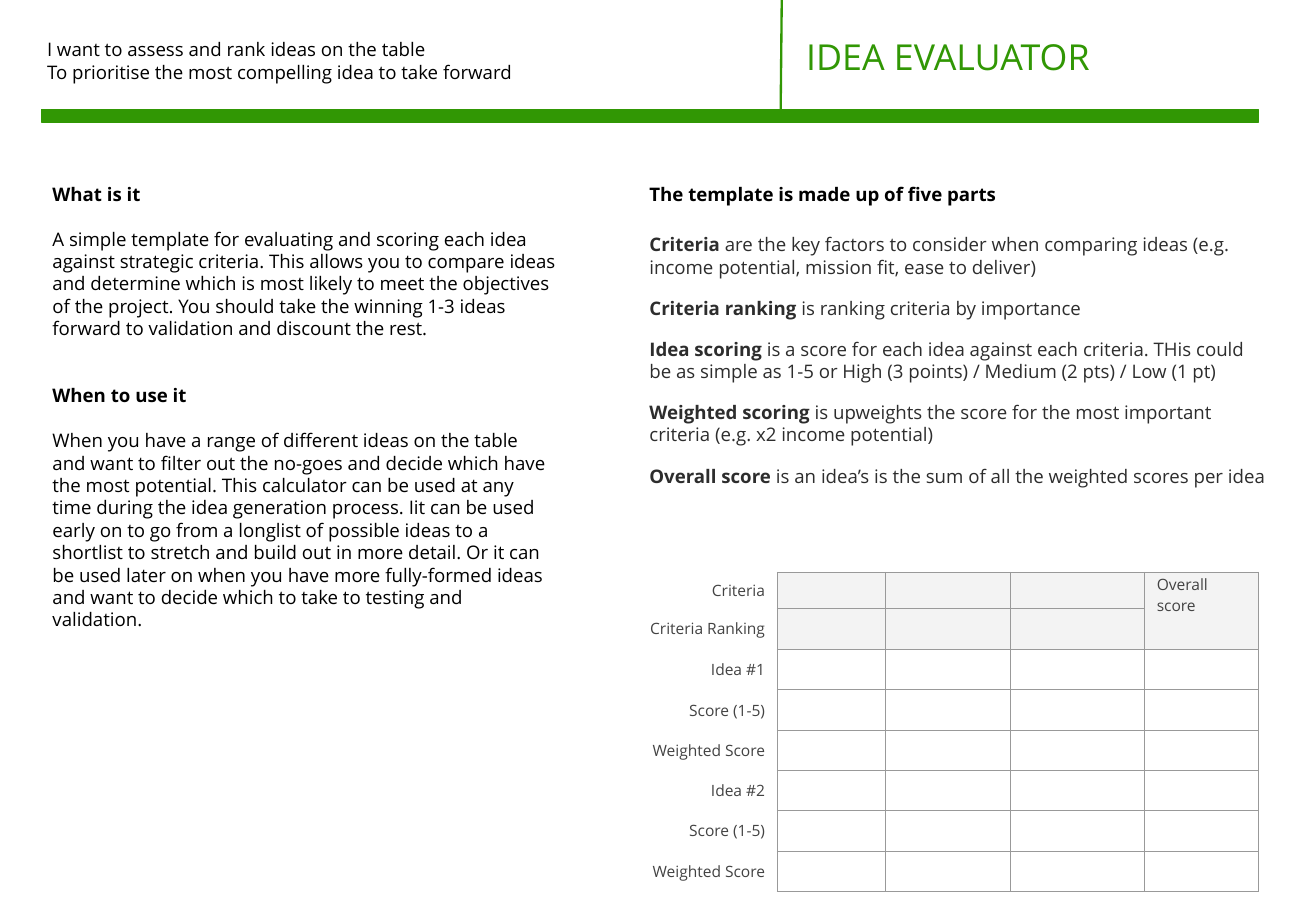
from lxml import etree
from pptx import Presentation
from pptx.dml.color import RGBColor
from pptx.enum.shapes import MSO_CONNECTOR, MSO_SHAPE
from pptx.enum.text import MSO_ANCHOR, PP_ALIGN
from pptx.oxml.ns import qn
from pptx.util import Inches, Pt

RECTANGLE = MSO_SHAPE.RECTANGLE
STRAIGHT = MSO_CONNECTOR.STRAIGHT
TOP, MIDDLE = MSO_ANCHOR.TOP, MSO_ANCHOR.MIDDLE
LEFT, RIGHT = PP_ALIGN.LEFT, PP_ALIGN.RIGHT

GREEN = RGBColor(0x31, 0x97, 0x04)
BLACK = RGBColor(0, 0, 0)
CHARCOAL = RGBColor(0x2D, 0x2D, 0x2D)
LABEL_GREY = RGBColor(0x43, 0x43, 0x43)
GRID_GREY = RGBColor(0x99, 0x99, 0x99)
HEADER_FILL = RGBColor(0xF3, 0xF3, 0xF3)
FONT = "Open Sans"

# Content: each paragraph is (space before, bold part, plain part, colour)
PURPOSE = [
    (0, "", "I want to assess and rank ideas on the table", BLACK),
    (0, "", "To prioritise the most compelling idea to take forward", BLACK),
]
TITLE = [(0, "", "IDEA EVALUATOR", GREEN)]
ABOUT = [
    (0, "What is it", "", BLACK),
    (14.4, "", "A simple template for evaluating and scoring each idea against "
     "strategic criteria. This allows you to compare ideas and determine which is "
     "most likely to meet the objectives of the project. You should take the winning "
     "1-3 ideas forward to validation and discount the rest.", BLACK),
    (28.8, "When to use it", "", BLACK),
    (14.4, "", "When you have a range of different ideas on the table and want to "
     "filter out the no-goes and decide which have the most potential. This calculator "
     "can be used at any time during the idea generation process. Iit can be used early "
     "on to go from a longlist of possible ideas to a shortlist to stretch and build out "
     "in more detail. Or it can be used later on when you have more fully-formed ideas "
     "and want to decide which to take to testing and validation.", BLACK),
]
PARTS = [
    (0, "The template is made up of five parts", "", BLACK),
    (18, "Criteria", " are the key factors to consider when comparing ideas (e.g. "
     "income potential, mission fit, ease to deliver)", CHARCOAL),
    (12, "Criteria ranking", " is ranking criteria by importance", CHARCOAL),
    (12, "Idea scoring ", "is a score for each idea against each criteria. THis could "
     "be as simple as 1-5 or High (3 points) / Medium (2 pts) / Low (1 pt)", CHARCOAL),
    (12, "Weighted scoring ", "is upweights the score for the most important "
     "criteria (e.g. x2 income potential)", CHARCOAL),
    (12, "Overall score ", "is an idea’s is the sum of all the weighted scores per idea",
     CHARCOAL),
]
# Left, top, width, height, inset, size, paragraphs
TEXT_BLOCKS = [
    (0.29, 0.21, 6.6, 0.77, 0.13, 12, PURPOSE),
    (7.1, 0.21, 4.14, 0.59, 0.1, 23, TITLE),
    (0.37, 1.53, 4.7, 4.85, 0.1, 12, ABOUT),
    (5.7, 1.53, 5.72, 2.95, 0.1, 12, PARTS),
]
HEADER_LABELS = ["Criteria", "Criteria Ranking"]
IDEA_LABELS = ["Score (1-5)", "Weighted Score"]
ROW_LABELS = HEADER_LABELS + ["Idea #1"] + IDEA_LABELS + ["Idea #2"] + IDEA_LABELS
COLUMN_WIDTHS = [1.24, 0.97, 1.11, 1.2, 1.02]
ROW_HEIGHTS = [0.32, 0.37] + [0.36] * (len(ROW_LABELS) - 2)


def set_format(target, values):
    for name, value in values.items():
        setattr(target, name, value)


def add_run(paragraph, text, size, color, bold=False):
    run = paragraph.add_run()
    run.text = text
    set_format(run.font, {"name": FONT, "size": Pt(size), "bold": bold})
    run.font.color.rgb = color


def margins(left, right, end):
    return {"margin_left": Inches(left), "margin_right": Inches(right),
            "margin_top": Inches(end), "margin_bottom": Inches(end)}


def add_text_block(slide, left, top, width, height, inset, size, paragraphs):
    box = slide.shapes.add_textbox(*map(Inches, (left, top, width, height)))
    frame = box.text_frame
    set_format(frame, {"word_wrap": True, "vertical_anchor": TOP,
                       **margins(inset, inset, inset)})
    for i, (before, lead, rest, color) in enumerate(paragraphs):
        paragraph = frame.add_paragraph() if i else frame.paragraphs[0]
        paragraph.space_before = Pt(before)
        for text, bold in ((lead, True), (rest, False)):
            if text:
                add_run(paragraph, text, size, color, bold)


def set_borders(cell, visible_sides):
    properties = cell._tc.get_or_add_tcPr()
    for side in "LRTB":
        line = etree.SubElement(properties, qn(f"a:ln{side}"), w=str(Pt(0.75)))
        if side in visible_sides:
            fill = etree.SubElement(line, qn("a:solidFill"))
            etree.SubElement(fill, qn("a:srgbClr"), val=str(GRID_GREY))
        else:
            etree.SubElement(line, qn("a:noFill"))


def add_score_table(slide, left, top):
    table = slide.shapes.add_table(
        len(ROW_HEIGHTS), len(COLUMN_WIDTHS), Inches(left), Inches(top),
        Inches(sum(COLUMN_WIDTHS)), Inches(sum(ROW_HEIGHTS))).table
    set_format(table, {"first_row": False, "horz_banding": False})
    for column, width in zip(table.columns, COLUMN_WIDTHS):
        column.width = Inches(width)
    for row, height in zip(table.rows, ROW_HEIGHTS):
        row.height = Inches(height)

    overall = (0, len(COLUMN_WIDTHS) - 1)
    texts = {(r, 0): label for r, label in enumerate(ROW_LABELS)}
    texts[overall] = "Overall score"
    for r in range(len(ROW_HEIGHTS)):
        for c in range(len(COLUMN_WIDTHS)):
            cell = table.cell(r, c)
            is_label = c == 0
            set_format(cell, {"vertical_anchor": MIDDLE if is_label else TOP,
                              **margins(0.08 if is_label else 0.11, 0.11, 0.01)})
            set_borders(cell, "R" if is_label else "LRTB")
            if r < len(HEADER_LABELS) and not is_label:
                cell.fill.solid()
                cell.fill.fore_color.rgb = HEADER_FILL
            else:
                cell.fill.background()
            paragraph = cell.text_frame.paragraphs[0]
            paragraph.alignment = RIGHT if is_label else LEFT
            if (r, c) in texts:
                add_run(paragraph, texts[r, c], 10, LABEL_GREY)
            else:
                etree.SubElement(paragraph._p, qn("a:endParaRPr"), sz="1000")
    table.cell(*overall).merge(table.cell(len(HEADER_LABELS) - 1, overall[1]))


def main():
    deck = Presentation()
    set_format(deck, {"slide_width": Inches(11.75), "slide_height": Inches(8.25)})
    slide = deck.slides.add_slide(deck.slide_layouts[6])

    # Header bar and divider
    bar = slide.shapes.add_shape(RECTANGLE, *map(Inches, (0.37, 0.98, 10.87, 0.11)))
    bar.shadow.inherit = False
    bar.fill.solid()
    bar.fill.fore_color.rgb = GREEN
    divider = slide.shapes.add_connector(STRAIGHT, *map(Inches, (6.98, 0, 6.97, 1.04)))
    etree.SubElement(divider._element.spPr, qn("a:effectLst"))
    for shape, width in ((bar, 0.75), (divider, 1.5)):
        shape.line.color.rgb = GREEN
        shape.line.width = Pt(width)

    # Text and scoring table
    for block in TEXT_BLOCKS:
        add_text_block(slide, *block)
    add_score_table(slide, 5.7, 5.11)

    deck.save("out.pptx")


if __name__ == "__main__":
    main()
